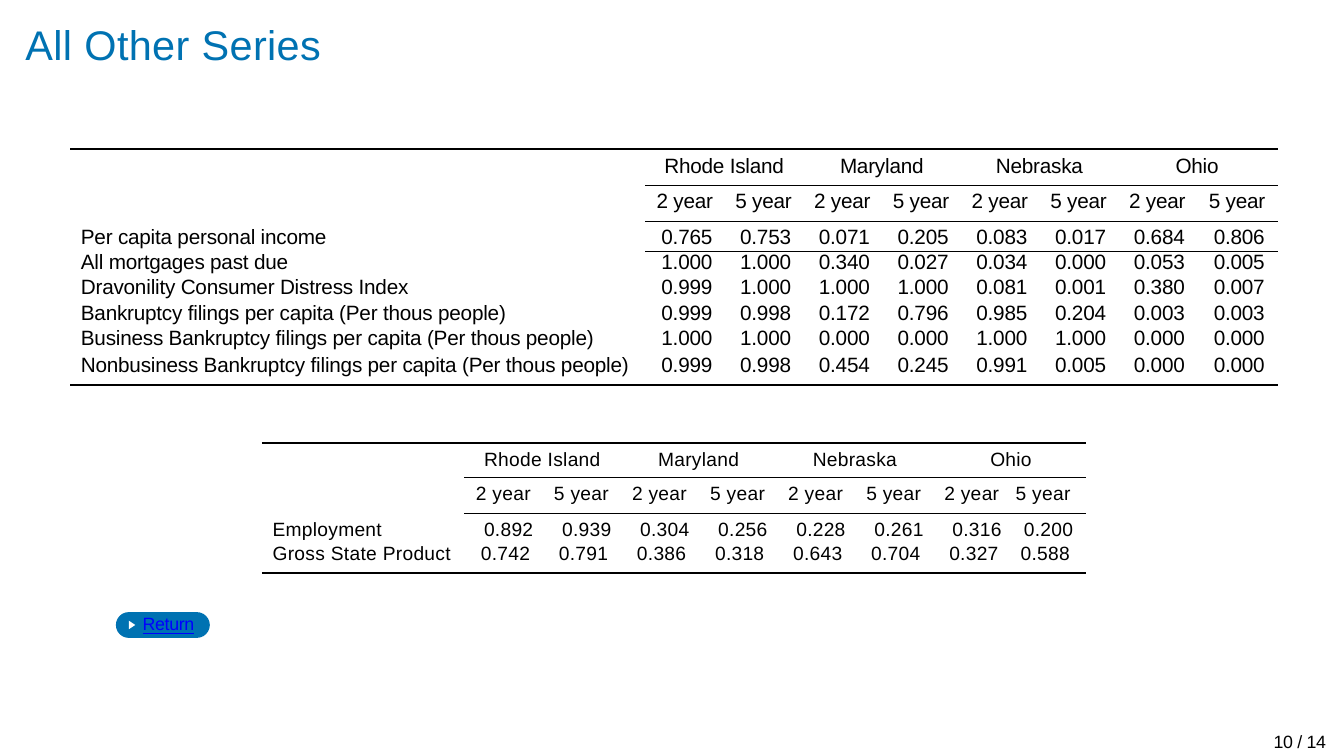
from pptx import Presentation
from pptx.dml.color import RGBColor
from pptx.enum.shapes import MSO_CONNECTOR, MSO_SHAPE
from pptx.enum.text import PP_ALIGN
from pptx.oxml.ns import qn
from pptx.util import Inches, Pt
from lxml import etree

BLUE = RGBColor(0x00, 0x72, 0xB2)
LINK = RGBColor(0x00, 0x00, 0xFF)
BLACK = RGBColor(0, 0, 0)
WHITE = RGBColor(0xFF, 0xFF, 0xFF)
LEFT, CENTER = PP_ALIGN.LEFT, PP_ALIGN.CENTER
STRAIGHT = MSO_CONNECTOR.STRAIGHT
PILL, TRIANGLE = MSO_SHAPE.ROUNDED_RECTANGLE, MSO_SHAPE.ISOSCELES_TRIANGLE
NO_STYLE = "{2D5ABB26-0587-4C30-8999-92F81FD0307C}"

STATES = ["Rhode Island", "Maryland", "Nebraska", "Ohio"]
HEADER = [""] + ["2 year", "5 year"] * len(STATES)

# Row layout: height, top margin, space before, line spacing, value indent
HEAD = (0.17, 0.02, 1.1, None, 0)
FIRST = (0.14, 0.02, 1.1, 8, 0.02)
BODY = (0.12, 0, 0, 7.6, 0.02)
TABLES = [
    dict(left=0.33, top=0.7, width=5.67, label=2.7, pitch=0.37, size=7, spc=-0.07,
         head_top=0.87, end_margin=0, rule=0.55, rules={0: 0.25, 1: 0.25},
         layout=[HEAD, FIRST, BODY, BODY, BODY, BODY, (0.15, 0, 0, 8, 0.02)],
         rows=[
             "Per capita personal income|0.765 0.753 0.071 0.205 0.083 0.017 0.684 0.806",
             "All mortgages past due|1.000 1.000 0.340 0.027 0.034 0.000 0.053 0.005",
             "Dravonility Consumer Distress Index|0.999 1.000 1.000 1.000 0.081 0.001 0.380 0.007",
             "Bankruptcy filings per capita (Per thous people)|0.999 0.998 0.172 0.796 0.985 0.204 0.003 0.003",
             "Business Bankruptcy filings per capita (Per thous people)|1.000 1.000 0.000 0.000 1.000 1.000 0.000 0.000",
             "Nonbusiness Bankruptcy filings per capita (Per thous people)|0.999 0.998 0.454 0.245 0.991 0.005 0.000 0.000",
         ]),
    dict(left=1.23, top=2.08, width=3.87, label=0.95, pitch=2.2 / 6, size=6.5, spc=0.1,
         head_top=2.24, end_margin=0.05, rule=0.54, rules={0: 0.25},
         layout=[(0.17, 0.03, 1.1, None, 0), (0.14, 0.03, 0.5, None, 0.05),
                 (0.14, 0, 0.5, None, 0.02)],
         rows=[
             "Employment|0.892 0.939 0.304 0.256 0.228 0.261 0.316 0.200",
             "Gross State Product|0.742 0.791 0.386 0.318 0.643 0.704 0.327 0.588",
         ]),
]


def write(tf, text, size, color=BLACK, align=LEFT, spc=-0.1, before=0,
          line=None, indent=0, top=0.01, wrap=False, underline=False):
    tf.word_wrap = wrap
    tf.margin_left = tf.margin_right = tf.margin_bottom = 0
    tf.margin_top = Inches(top)
    p = tf.paragraphs[0]
    p.alignment = align
    p.space_before = Pt(before)
    if line:
        p.line_spacing = Pt(line)
    p._p.get_or_add_pPr().set("marL", str(Inches(indent)))
    if not text:
        p._p.get_or_add_endParaRPr().set("sz", str(int(size * 100)))
        return
    r = p.add_run()
    r.text = text
    r.font.name, r.font.size, r.font.color.rgb = "Arial", Pt(size), color
    if underline:
        r.font.underline = True
    r._r.get_or_add_rPr().set("spc", str(round(spc * 100)))


def border(cell, side, width):
    ln = etree.Element(qn(f"a:ln{side}"), w=str(Pt(width)))
    fill = etree.SubElement(ln, qn("a:solidFill"))
    etree.SubElement(fill, qn("a:srgbClr"), val=str(BLACK))
    cell._tc.get_or_add_tcPr().insert(0, ln)


prs = Presentation()
prs.slide_width, prs.slide_height = Inches(6.31), Inches(3.55)
s = prs.slides.add_slide(prs.slide_layouts[6])

# Title
tb = s.shapes.add_textbox(Inches(0.12), Inches(0.07), Inches(1.43), Inches(0.27))
write(tb.text_frame, "All Other Series", 14, BLUE, spc=0.1, before=1.4, top=0.02)

for t in TABLES:
    # Top rule
    y = Inches(t["top"])
    ln = s.shapes.add_connector(STRAIGHT, Inches(t["left"]), y,
                                Inches(t["left"] + t["width"]), y)
    ln.line.color.rgb, ln.line.width = BLACK, Pt(t["rule"])
    etree.SubElement(ln._element.spPr, qn("a:effectLst"))

    # State names, each centred over its two columns
    for i, state in enumerate(STATES):
        x = t["left"] + t["label"] + 2 * i * t["pitch"]
        tb = s.shapes.add_textbox(Inches(x), Inches(t["top"] + 0.01),
                                  Inches(2 * t["pitch"]), Inches(0.14))
        write(tb.text_frame, state, t["size"], align=CENTER, spc=t["spc"],
              before=0.9, wrap=True)

    # Values
    rows = [HEADER]
    for row in t["rows"]:
        name, values = row.split("|")
        rows.append([name] + values.split())
    height = sum(layout[0] for layout in t["layout"])
    frame = s.shapes.add_table(len(rows), len(HEADER), Inches(t["left"]),
                               Inches(t["head_top"]), Inches(t["width"]), Inches(height))
    table = frame.table
    table.first_row = table.horz_banding = False
    table._tbl.tblPr.find(qn("a:tableStyleId")).text = NO_STYLE
    last_col, last_row = len(HEADER) - 1, len(rows) - 1
    widths = [t["label"]] + [t["pitch"]] * (last_col - 1)
    widths.append(t["width"] - sum(widths))
    for col, width in zip(table.columns, widths):
        col.width = Inches(width)

    for i, (row, layout) in enumerate(zip(rows, t["layout"])):
        row_height, top, before, line, indent = layout
        table.rows[i].height = Inches(row_height)
        for j, text in enumerate(row):
            cell = table.cell(i, j)
            cell.fill.background()
            write(cell.text_frame, text, t["size"], align=CENTER if j else LEFT,
                  spc=t["spc"], before=before, line=line,
                  indent=indent if j else 0.05, wrap=True)
            cell.margin_left = cell.margin_bottom = 0
            cell.margin_right = Inches(t["end_margin"] if j == last_col else 0)
            cell.margin_top = Inches(top)
            if i == last_row:
                border(cell, "B", 0.75)
            elif j and i in t["rules"]:
                border(cell, "B", t["rules"][i])
            if j and i == 0:
                border(cell, "T", 0.25)

# Return button
pill = s.shapes.add_shape(PILL, Inches(0.55), Inches(2.88), Inches(0.43), Inches(0.11))
pill.adjustments[0] = 0.5
pill.line.color.rgb, pill.line.width = BLUE, Pt(0.8)
arrow = s.shapes.add_shape(TRIANGLE, Inches(0.6), Inches(2.92), Inches(0.04), Inches(0.03))
arrow.rotation = 90
arrow.line.fill.background()
for sp, color in ((pill, BLUE), (arrow, WHITE)):
    sp.shadow.inherit = False
    sp.fill.solid()
    sp.fill.fore_color.rgb = color
tb = s.shapes.add_textbox(Inches(0.67), Inches(2.87), Inches(0.28), Inches(0.13))
write(tb.text_frame, "Return", 6, LINK, before=0.9, underline=True)

# Page number
tb = s.shapes.add_textbox(Inches(5.98), Inches(3.42), Inches(0.29), Inches(0.13))
write(tb.text_frame, "10 / 14", 6, before=0.7)

prs.save("out.pptx")
